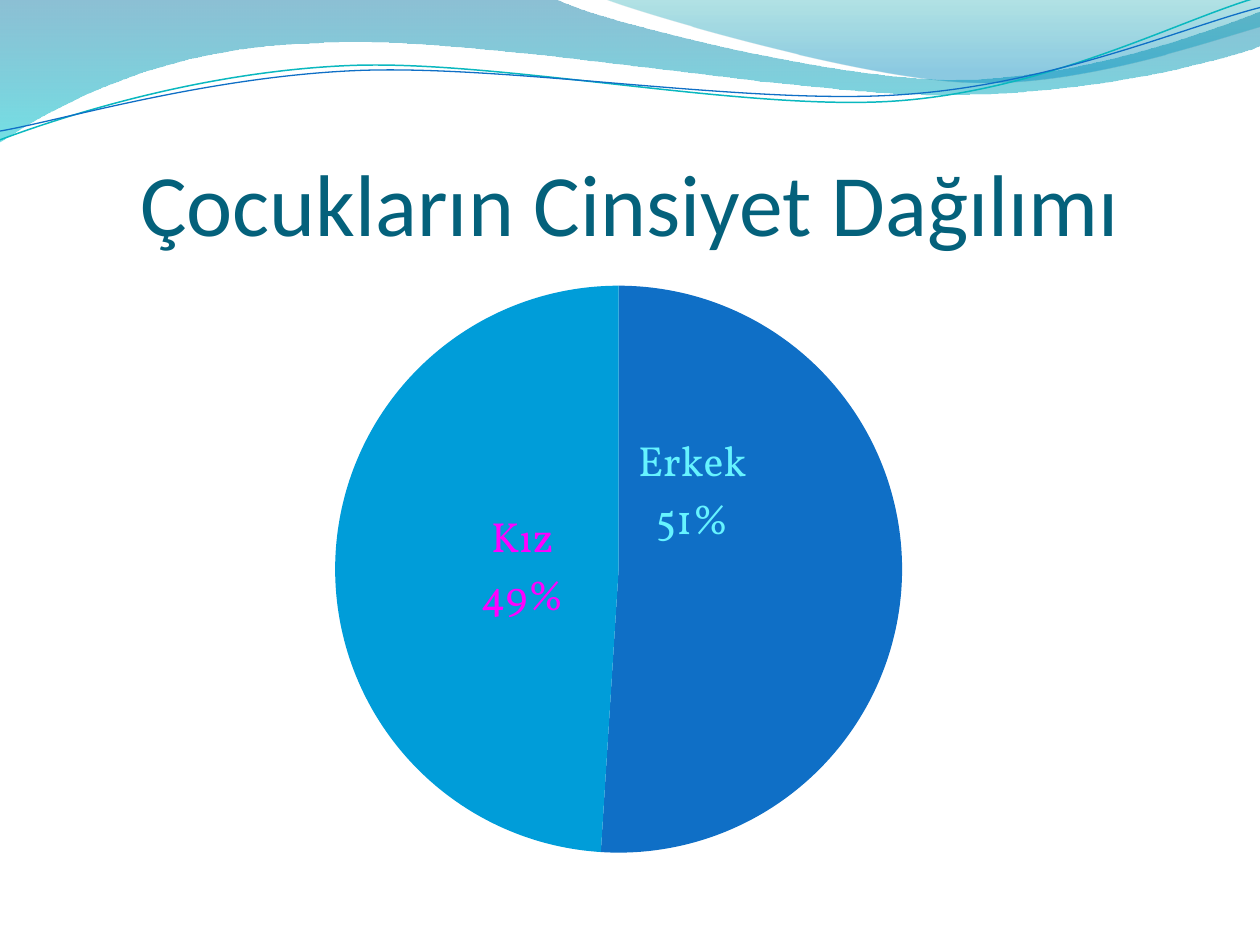
from collections import namedtuple
from dataclasses import dataclass
from math import cos, radians, sin

from lxml import etree
from pptx import Presentation
from pptx.chart.data import CategoryChartData
from pptx.dml.color import RGBColor
from pptx.enum.chart import XL_CHART_TYPE, XL_LABEL_POSITION
from pptx.enum.text import MSO_ANCHOR, PP_ALIGN
from pptx.oxml import parse_xml
from pptx.oxml.ns import nsdecls, qn
from pptx.util import Cm, Pt

PIE = XL_CHART_TYPE.PIE
MIDDLE = XL_LABEL_POSITION.CENTER
BOTTOM, CENTER = MSO_ANCHOR.BOTTOM, PP_ALIGN.CENTER
GRID, TILT, PIVOT = 10, 2.7, (4.99, 0.58)

Box = namedtuple("Box", "x y w h")
Slice = namedtuple("Slice", "name value label fill ink dx dy")


@dataclass(frozen=True)
class Theme:
    """Colours, fonts and type sizes of the slide."""
    title: str = "04617B"
    text: str = "000000"
    blue: str = "0F6FC6"
    sky: str = "009DD9"
    teal: str = "0AB8BF"
    aqua: str = "66F3FF"
    pink: str = "FF00FF"
    back_wave: tuple = ((0, "0074A1", 45), (1, "00C6CF", 55))
    front_wave: tuple = ((0, "00A1A9", 30), (0.8, "008BBF", 45))
    title_font: str = "Calibri"
    chart_font: str = "Vollkorn"
    title_size: int = 50
    chart_size: int = 18
    label_size: int = 24


THEME = Theme()

BANDS = [
    (THEME.back_wave,
     [(0, 0), (4.4, -0.01), (4.76, 0.17, 6.64, 0.63, 7.58, 0.63),
      (8.53, 0.63, 9.58, 0.26, 10, 0.09), (10.01, 0.36),
      (9.83, 0.44, 8.7, 0.76, 7.46, 0.75), (6.22, 0.75, 3.82, 0.28, 2.57, 0.34),
      (1.29, 0.36, 0.46, 0.83, -0.01, 1.13)]),
    (THEME.front_wave,
     [(4.79, -0.01), (5.09, 0.11, 6.82, 0.62, 7.69, 0.65),
      (8.56, 0.69, 9.61, 0.32, 10, 0.21), (10, 0)]),
]
STRANDS = [
    (THEME.teal, 0.85,
     [(0, 1.11), (0.48, 0.93, 1.58, 0.57, 2.77, 0.52),
      (3.95, 0.47, 5.93, 0.89, 7.13, 0.8), (8.33, 0.71, 9.38, 0.15, 9.98, -0.02)]),
    (THEME.blue, 0.75,
     [(0, 1.04), (0.47, 0.96, 1.64, 0.61, 2.83, 0.56),
      (4.03, 0.51, 5.97, 0.84, 7.17, 0.75), (8.36, 0.67, 9.41, 0.21, 10, 0.06)]),
]
SLICES = [
    Slice("Erkek", 51, "Erkek\n51%", THEME.blue, THEME.aqua, -0.06, -0.13),
    Slice("Kız", 49, "Kız\n49%", THEME.sky, THEME.pink, 0.04, 0.01),
]


def rgb(value):
    """Return a colour from its hex string."""
    return RGBColor.from_string(value)


def assign(obj, **values):
    """Set each named attribute of an object."""
    for name, value in values.items():
        setattr(obj, name, value)


def turn(point, angle):
    """Rotate a grid point clockwise about the pivot of the strands."""
    dx, dy = point[0] - PIVOT[0], point[1] - PIVOT[1]
    c, s = cos(radians(angle)), sin(radians(angle))
    return PIVOT[0] + dx * c - dy * s, PIVOT[1] + dx * s + dy * c


def add_curve(slide, box, path, close, tilt=0):
    """Draw lines and cubic curves on a ten-unit grid across the box."""
    unit = box.w / GRID
    knots = [turn(seg[i:i + 2], tilt) for seg in path for i in range(0, len(seg), 2)]
    points = [(round(x * unit), round(y * unit)) for x, y in knots]
    builder = slide.shapes.build_freeform(*points[0])
    builder.add_line_segments(points[1:], close=close)
    sp = builder.convert_to_shape(box.x, box.y)
    lines = iter(list(sp._element.iter(qn("a:lnTo"))))
    for seg in path[1:]:
        first = next(lines)
        if len(seg) == 6:
            first.tag = qn("a:cubicBezTo")
            for extra in (next(lines), next(lines)):
                first.append(extra[0])
                extra.getparent().remove(extra)
    sp.rotation = -tilt % 360
    sp.shadow.inherit = False
    return sp


def add_waves(slide, box):
    """Draw the gradient bands and thin strands of the header."""
    for stops, path in BANDS:
        sp = add_curve(slide, box, path, True)
        sp.line.fill.background()
        sp.fill.gradient()
        sp.fill.gradient_angle = 270
        for stop, (position, color, _) in zip(sp.fill.gradient_stops, stops):
            stop.position = position
            stop.color.rgb = rgb(color)
        for clr, (_, _, opacity) in zip(sp._element.spPr.iter(qn("a:srgbClr")), stops):
            etree.SubElement(clr, qn("a:alpha")).set("val", str(opacity * 1000))
    for color, width, path in STRANDS:
        sp = add_curve(slide, box, path, False, TILT)
        sp.fill.background()
        sp.line.width = Pt(width)
        sp.line.color.rgb = rgb(color)


def add_title(slide, box, text):
    """Place and format the title placeholder in front of the waves."""
    sp = slide.shapes.title
    assign(sp, left=box.x, top=box.y, width=box.w, height=box.h)
    tf = sp.text_frame
    assign(tf, word_wrap=True, vertical_anchor=BOTTOM, margin_left=0,
           margin_right=0, margin_top=Cm(0.13), margin_bottom=0)
    p = tf.paragraphs[0]
    p.alignment = CENTER
    r = p.add_run()
    r.text = text
    assign(r.font, name=THEME.title_font, size=Pt(THEME.title_size))
    r.font.color.rgb = rgb(THEME.title)
    slide.shapes._spTree.append(sp._element)


def manual_layout(**values):
    """Build a chart layout element from its fractions."""
    parts = "".join(f'<c:{k} val="{v}"/>' for k, v in values.items())
    return parse_xml(f'<c:layout {nsdecls("c")}><c:manualLayout>{parts}'
                     '</c:manualLayout></c:layout>')


def label_slice(point, item):
    """Write the category and percentage inside a slice."""
    label = point.data_label
    tf = label.text_frame
    tf.text = item.label
    for p in tf.paragraphs:
        for r in p.runs:
            r.font.size = Pt(THEME.label_size)
            r.font.color.rgb = rgb(item.ink)
    label.position = MIDDLE


def add_pie(slide, box):
    """Add the pie chart with its labels inside the slices."""
    data = CategoryChartData()
    data.categories = [item.name for item in SLICES]
    data.add_series("Series 1", [item.value for item in SLICES])
    chart = slide.shapes.add_chart(PIE, *box, data).chart
    assign(chart, has_title=False, has_legend=False)
    assign(chart.font, name=THEME.chart_font, size=Pt(THEME.chart_size))
    chart.font.color.rgb = rgb(THEME.text)
    plot = chart.plots[0]
    plot.vary_by_categories = True
    area = chart._chartSpace.chart.plotArea
    for old in area.findall(qn("c:layout")):
        area.remove(old)
    area.insert(0, manual_layout(layoutTarget="inner", xMode="edge", yMode="edge",
                                 x=0.24, y=0.03, w=0.5, h=0.94))
    series = plot.series[0]
    for i, item in enumerate(SLICES):
        point = series.points[i]
        point.format.fill.solid()
        point.format.fill.fore_color.rgb = rgb(item.fill)
        label_slice(point, item)
    for label, item in zip(series._element.iter(qn("c:dLbl")), SLICES):
        label.insert(1, manual_layout(x=item.dx, y=item.dy))
        for name, shown in (("showVal", 0), ("showCatName", 1), ("showPercent", 1)):
            label.find(qn(f"c:{name}")).set("val", str(shown))
        etree.SubElement(label, qn("c:separator")).text = "\n"


def main():
    """Build the slide and save it."""
    prs = Presentation()
    assign(prs, slide_width=Cm(25.4), slide_height=Cm(19.05))
    slide = prs.slides.add_slide(prs.slide_layouts[5])
    add_waves(slide, Box(0, 0, prs.slide_width, Cm(2.9)))
    left, width = Cm(1.27), Cm(22.86)
    add_title(slide, Box(left, Cm(1.96), width, Cm(3.17)), "Çocukların Cinsiyet Dağılımı")
    add_pie(slide, Box(left, Cm(5.38), width, Cm(12.19)))
    prs.save("out.pptx")


if __name__ == "__main__":
    main()
